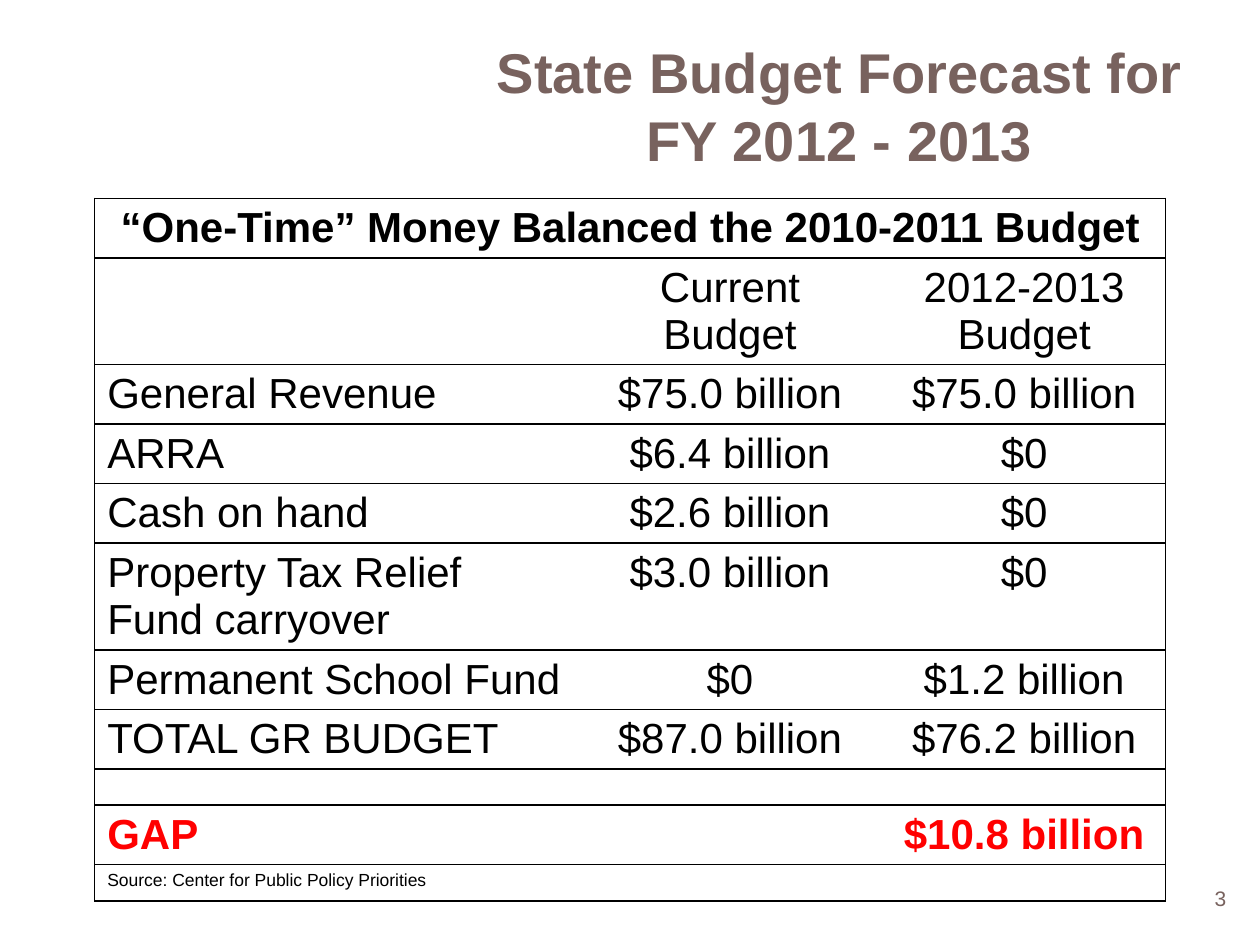
from dataclasses import dataclass

from lxml.etree import SubElement
from pptx import Presentation
from pptx.dml.color import RGBColor
from pptx.enum.text import MSO_ANCHOR, PP_ALIGN
from pptx.oxml.ns import qn
from pptx.util import Cm, Pt


@dataclass(frozen=True)
class Theme:
    font: str = "Arial"
    brown: str = "78625E"
    black: str = "000000"
    red: str = "FF0000"
    white: str = "FFFFFF"
    title_size: int = 32
    table_size: int = 24
    number_size: int = 12
    source_size: int = 10
    border_width: int = 1


THEME = Theme()
COLUMN_WIDTHS = (9.73, 6.15, 5.71)
SINGLE_ROW, DOUBLE_ROW, SMALL_ROW = 1.2, 2.15, 0.73

HEADING = "“One-Time” Money Balanced the 2010-2011 Budget"
BUDGET_ROWS = (
    ("", "Current Budget", "2012-2013 Budget"),
    ("General Revenue", "$75.0 billion", "$75.0 billion"),
    ("ARRA", "$6.4 billion", "$0"),
    ("Cash on hand", "$2.6 billion", "$0"),
    ("Property Tax Relief Fund carryover", "$3.0 billion", "$0"),
    ("Permanent School Fund", "$0", "$1.2 billion"),
    ("TOTAL GR BUDGET", "$87.0 billion", "$76.2 billion"),
)
GAP_ROW = ("GAP", "", "$10.8 billion")
SOURCE = "Source: Center for Public Policy Priorities"
DOUBLE_ROWS = (1, 5)


def style_paragraph(paragraph, size, color, alignment=PP_ALIGN.LEFT, bold=False):
    paragraph.alignment = alignment
    font = paragraph.font
    font.name = THEME.font
    font.size = Pt(size)
    font.bold = bold
    font.color.rgb = RGBColor.from_string(color)


def add_title(slide, text):
    title = slide.shapes.title
    title.left, title.top, title.width, title.height = Cm(9.09), Cm(0.43), Cm(15.67), Cm(3.38)
    frame = title.text_frame
    frame.text = text
    frame.word_wrap = True
    frame.vertical_anchor = MSO_ANCHOR.MIDDLE
    style_paragraph(frame.paragraphs[0], THEME.title_size, THEME.brown, PP_ALIGN.CENTER, True)


def add_slide_number(slide, number):
    frame = slide.shapes.add_textbox(Cm(19.05), Cm(17.73), Cm(5.92), Cm(1.09)).text_frame
    frame.word_wrap = True
    frame.text = number
    style_paragraph(frame.paragraphs[0], THEME.number_size, THEME.brown, PP_ALIGN.RIGHT)


def set_borders(cell, drawn_sides):
    """Draw the named sides (L, R, T, B) and clear the others."""
    properties = cell._tc.get_or_add_tcPr()
    for side in "LRTB":
        line = SubElement(properties, qn(f"a:ln{side}"), w=str(Pt(THEME.border_width)))
        if side in drawn_sides:
            fill = SubElement(line, qn("a:solidFill"))
            SubElement(fill, qn("a:srgbClr"), val=THEME.black)
        else:
            SubElement(line, qn("a:noFill"))


def fill_row(table, row, texts, size=THEME.table_size, color=THEME.black, bold=False):
    for column, text in enumerate(texts):
        cell = table.cell(row, column)
        cell.text = text
        alignment = PP_ALIGN.CENTER if column else PP_ALIGN.LEFT
        style_paragraph(cell.text_frame.paragraphs[0], size, color, alignment, bold)


def fill_merged_row(table, row, text, **style):
    cell = table.cell(row, 0)
    cell.merge(table.cell(row, len(COLUMN_WIDTHS) - 1))
    cell.text = text
    style_paragraph(cell.text_frame.paragraphs[0], color=THEME.black, **style)


def add_budget_table(slide):
    spacer_row = len(BUDGET_ROWS) + 1
    gap_row, source_row = spacer_row + 1, spacer_row + 2
    heights = [SINGLE_ROW] * (source_row + 1)
    for row in DOUBLE_ROWS:
        heights[row] = DOUBLE_ROW
    heights[spacer_row] = heights[source_row] = SMALL_ROW

    table = slide.shapes.add_table(
        len(heights), len(COLUMN_WIDTHS), Cm(1.91), Cm(4),
        Cm(sum(COLUMN_WIDTHS)), Cm(sum(heights)),
    ).table
    table.first_row = table.horz_banding = False
    for column, width in zip(table.columns, COLUMN_WIDTHS):
        column.width = Cm(width)
    for row, height in zip(table.rows, heights):
        row.height = Cm(height)

    fill_merged_row(table, 0, HEADING, size=THEME.table_size,
                    alignment=PP_ALIGN.CENTER, bold=True)
    for row, texts in enumerate(BUDGET_ROWS, start=1):
        fill_row(table, row, texts)
    fill_row(table, spacer_row, ("", "", ""), size=THEME.source_size)
    fill_row(table, gap_row, GAP_ROW, color=THEME.red, bold=True)
    fill_merged_row(table, source_row, SOURCE, size=THEME.source_size)

    for cell in table.iter_cells():
        set_borders(cell, "LRTB" if cell.is_merge_origin else "TB")
        cell.fill.solid()
        cell.fill.fore_color.rgb = RGBColor.from_string(THEME.white)
    for row in range(len(heights)):
        for column, side in ((0, "L"), (len(COLUMN_WIDTHS) - 1, "R")):
            cell = table.cell(row, column)
            if not cell.is_merge_origin:
                properties = cell._tc.tcPr
                for line in properties.findall(qn("a:ln" + side)):
                    line.remove(line[0])
                    fill = SubElement(line, qn("a:solidFill"))
                    SubElement(fill, qn("a:srgbClr"), val=THEME.black)
    for column in range(len(COLUMN_WIDTHS)):
        spacer = table.cell(spacer_row, column)
        spacer.margin_top = spacer.margin_bottom = 0


def main():
    presentation = Presentation()
    presentation.slide_width, presentation.slide_height = Cm(25.4), Cm(19.05)
    slide = presentation.slides.add_slide(presentation.slide_layouts[5])
    add_title(slide, "State Budget Forecast for\vFY 2012 - 2013")
    add_budget_table(slide)
    add_slide_number(slide, "3")
    presentation.save("out.pptx")


if __name__ == "__main__":
    main()
